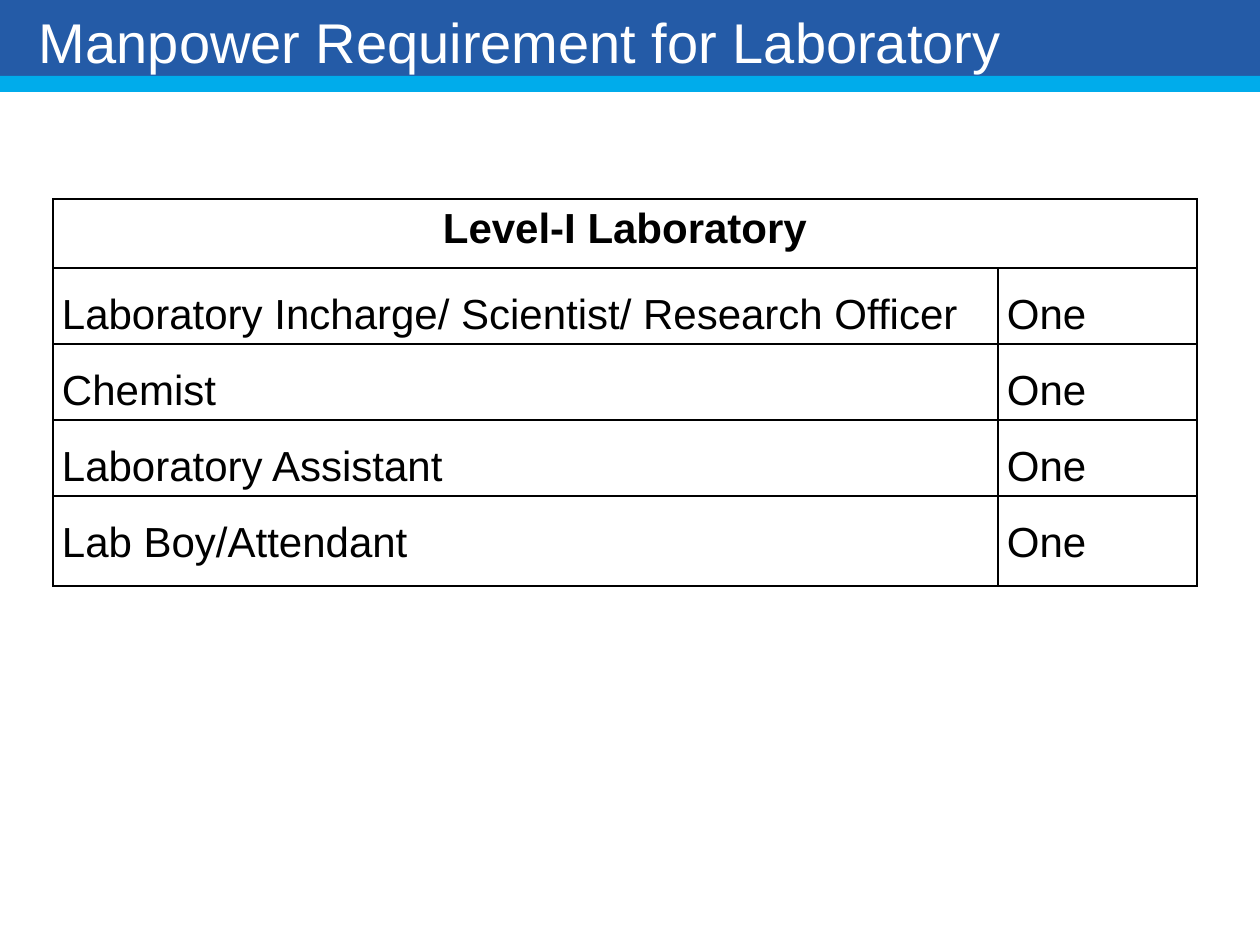
from lxml import etree
from pptx import Presentation
from pptx.dml.color import RGBColor
from pptx.enum.shapes import MSO_SHAPE
from pptx.enum.text import MSO_ANCHOR, PP_ALIGN
from pptx.oxml.ns import qn
from pptx.util import Emu, Pt

RECT = MSO_SHAPE.RECTANGLE
TOP = MSO_ANCHOR.TOP
LEFT, CENTER = PP_ALIGN.LEFT, PP_ALIGN.CENTER

SCALE = 914400 // 126
FONT = "Arial"
COLORS = {
    "band": "245BA7",
    "strip": "00ACEB",
    "paper": "FFFFFF",
    "ink": "000000",
}

HEAD = "Level-I Laboratory"
STAFF = [
    ("Laboratory Incharge/ Scientist/ Research Officer", "One"),
    ("Chemist", "One"),
    ("Laboratory Assistant", "One"),
    ("Lab Boy/Attendant", "One"),
]
COLS = [945, 199]
ROWS = [69, 76, 76, 76, 90]


def px(n):
    return Emu(n * SCALE)


def color(name):
    return RGBColor.from_string(COLORS[name])


def paint(item, name):
    item.fill.solid()
    item.fill.fore_color.rgb = color(name)


def style(para, size, name, bold=False, align=LEFT):
    para.alignment = align
    for run in para.runs:
        font = run.font
        font.name, font.size, font.bold = FONT, Pt(size), bold
        font.color.rgb = color(name)


def add_bar(slide, top, height, name):
    bar = slide.shapes.add_shape(RECT, 0, px(top), px(1260), px(height))
    bar.shadow.inherit = False
    paint(bar, name)
    bar.line.fill.background()
    return bar


def add_title(slide, text):
    frame = add_bar(slide, -6, 86, "band").text_frame
    frame.word_wrap = True
    frame.vertical_anchor = TOP
    # The top margin keeps the descenders above the strip
    frame.margin_left, frame.margin_top = px(39), px(14)
    frame.margin_right = frame.margin_bottom = 0
    frame.text = text
    style(frame.paragraphs[0], 32, "paper")


def add_edges(cell):
    props = cell._tc.get_or_add_tcPr()
    # Borders come before the fill in the cell properties
    for i, side in enumerate(("lnL", "lnR", "lnT", "lnB")):
        line = etree.Element(qn(f"a:{side}"), w=str(Pt(1)))
        fill = etree.SubElement(line, qn("a:solidFill"))
        etree.SubElement(fill, qn("a:srgbClr"), val=COLORS["ink"])
        props.insert(i, line)


def fill_cell(cell, text):
    cell.margin_left = cell.margin_right = px(9)
    cell.margin_top = cell.margin_bottom = 0
    cell.text = text
    para = cell.text_frame.paragraphs[0]
    para.line_spacing = 1.5
    style(para, 24, "ink")


def add_staff(slide):
    frame = slide.shapes.add_table(
        len(ROWS), len(COLS), px(53), px(199), px(sum(COLS)), px(sum(ROWS)))
    table = frame.table
    for col, width in zip(table.columns, COLS):
        col.width = px(width)
    for row, height in zip(table.rows, ROWS):
        row.height = px(height)
    for cell in table.iter_cells():
        paint(cell, "paper")
        add_edges(cell)

    # Heading across both columns
    head = table.cell(0, 0)
    head.merge(table.cell(0, 1))
    head.text = HEAD
    style(head.text_frame.paragraphs[0], 24, "ink", True, CENTER)

    # One row for each post
    for r, row in enumerate(STAFF, 1):
        for c, text in enumerate(row):
            fill_cell(table.cell(r, c), text)


def main():
    deck = Presentation()
    deck.slide_width, deck.slide_height = px(1260), px(945)
    slide = deck.slides.add_slide(deck.slide_layouts[6])
    add_title(slide, "Manpower Requirement for Laboratory")
    add_bar(slide, 76, 16, "strip")
    add_staff(slide)
    deck.save("out.pptx")


if __name__ == "__main__":
    main()
